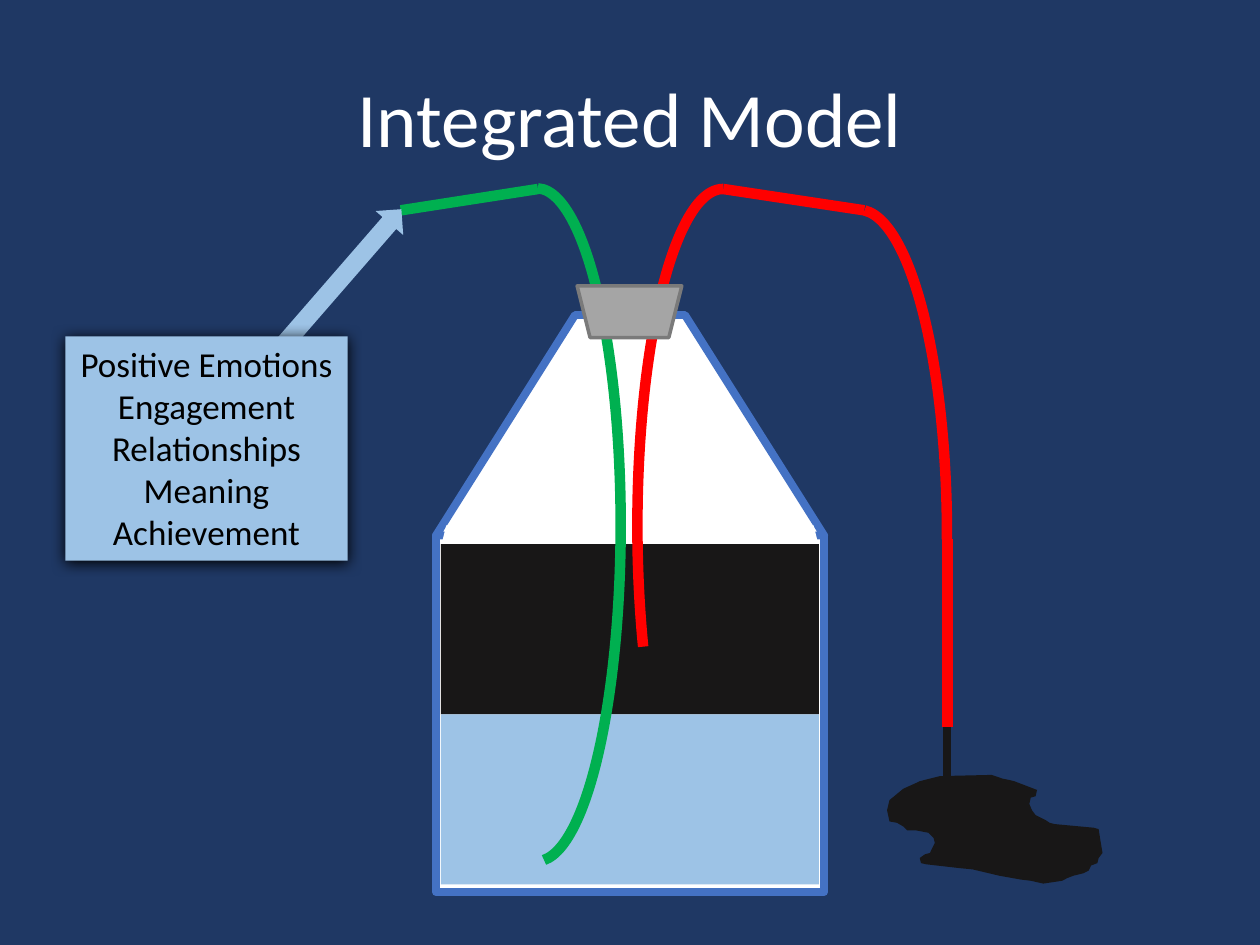
from lxml import etree
from pptx import Presentation
from pptx.dml.color import RGBColor
from pptx.enum.shapes import MSO_CONNECTOR, MSO_SHAPE as SHAPE
from pptx.enum.text import MSO_ANCHOR, MSO_AUTO_SIZE, PP_ALIGN
from pptx.oxml import parse_xml
from pptx.oxml.ns import qn
from pptx.util import Pt

COLORS = {
    "navy": "1F3864", "white": "FFFFFF", "black": "000000", "glass": "4472C4",
    "oil": "181717", "water": "9DC3E6", "red": "FF0000", "green": "00B050",
    "stopper": "A5A5A5", "stopper edge": "7A7A7A",
}
RGB = {name: RGBColor.from_string(value) for name, value in COLORS.items()}
TUBE = 6    # tube width
GLASS = 4.5  # bottle outline width


def write_text(shape, text, size, color, anchor=MSO_ANCHOR.MIDDLE):
    frame = shape.text_frame
    frame.word_wrap = True
    frame.vertical_anchor = anchor
    frame.text = text
    for paragraph in frame.paragraphs:
        paragraph.alignment = PP_ALIGN.CENTER
        font = paragraph.runs[0].font
        font.name, font.size = "Calibri", Pt(size)
        font.color.rgb = RGB[color]


def style(shape, fill=None, line=None, width=0):
    shape.shadow.inherit = False
    if fill:
        shape.fill.solid()
        shape.fill.fore_color.rgb = RGB[fill]
    else:
        shape.fill.background()
    if line:
        shape.line.color.rgb = RGB[line]
        shape.line.width = Pt(width)
    else:
        shape.line.fill.background()


presentation = Presentation()
presentation.slide_width, presentation.slide_height = Pt(720), Pt(540)
slide = presentation.slides.add_slide(presentation.slide_layouts[6])
slide.background.fill.solid()
slide.background.fill.fore_color.rgb = RGB["navy"]
shapes = slide.shapes

# Title
title = shapes.add_textbox(Pt(36), Pt(21.6), Pt(648), Pt(90))
write_text(title, "Integrated Model", size=44, color="white")

# Bottle, liquids and curved tubes, from back to front:
# kind, box, fill, line, line width, adjustments, rotation, flip
bottle_parts = [
    (SHAPE.RECTANGLE, (249.1, 306, 221.8, 203.8), "white", "glass", GLASS, (), 0, None),
    (SHAPE.TRAPEZOID, (249.1, 180, 221.8, 126), "white", "glass", GLASS, (0.631,), 0, None),
    (SHAPE.TRAPEZOID, (252, 300.2, 216, 12.2), "white", None, 0, (), 0, None),
    (SHAPE.RECTANGLE, (252, 311, 216, 97.2), "oil", None, 0, (), 0, None),
    (SHAPE.ARC, (221, 251.3, 384.5, 97.9), None, "red", TUBE, (107.971, 195.973), 270, "flipH"),
    (SHAPE.RECTANGLE, (252, 408.2, 216, 97.2), "water", None, 0, (), 0, None),
    (SHAPE.ARC, (114.5, 252, 384.5, 95.8), None, "green", TUBE, (108.087, 215.268), 90, None),
    (SHAPE.ARC, (304.6, 255.6, 372.2, 100.8), None, "red", TUBE, (108.604, 163.565), 90, None),
    (SHAPE.TRAPEZOID, (329.8, 163.4, 59.8, 29.5), "stopper", "stopper edge", 2, (), 0, "flipV"),
]
for kind, box, fill, line, width, adjustments, rotation, flip in bottle_parts:
    shape = shapes.add_shape(kind, *map(Pt, box))
    style(shape, fill, line, width)
    for index, value in enumerate(adjustments):
        shape.adjustments[index] = value
    shape.rotation = rotation
    if flip:
        shape._element.spPr.xfrm.set(flip, "1")

# Rock
rock_points = [
    (592.6, 451.4), (579.6, 446.4), (576.7, 445.7), (573.1, 445), (566.6, 442.8),
    (537.1, 443.5), (525.6, 446.4), (522.7, 447.8), (516.2, 450.7), (508.3, 457.2),
    (506.9, 463), (508.3, 469.4), (512.6, 470.2), (516.2, 472.3), (518.4, 474.5),
    (523.4, 474.5), (530.6, 475.9), (533.5, 478.8), (534.2, 481.7), (531.4, 487.4),
    (528.5, 488.2), (525.6, 490.3), (526.3, 493.2), (529.2, 493.9), (548.6, 496.1),
    (555.8, 496.8), (558.7, 497.5), (571, 500.4), (583.2, 502.6), (589, 503.3),
    (596.2, 504.9), (607, 503.3), (609.8, 501.8), (613.4, 500.4), (619.2, 499),
    (622.1, 497.5), (623.5, 494.6), (627.1, 493.2), (627.8, 490.3), (630, 487.4),
    (628.6, 478.8), (627.8, 473.8), (625, 473), (602.6, 470.9), (599.8, 470.2),
    (597.6, 468.7), (591.8, 465.8), (589.7, 463), (588.2, 459.4), (589, 455.8),
    (591.8, 455),
]
outline = [(Pt(x), Pt(y)) for x, y in rock_points]
builder = shapes.build_freeform(*outline[0])
builder.add_line_segments(outline[1:], close=True)
style(builder.convert_to_shape(), "oil")

# Straight tubes and the line down to the rock
for ends, color, width in [
    ((413.3, 108, 493.9, 120.2), "red", TUBE),
    ((229, 120.2, 307.4, 108), "green", TUBE),
    ((541.4, 308.2, 541.4, 415.4), "red", TUBE),
    ((541.4, 415.4, 541.4, 455.8), "oil", GLASS),
]:
    connector = shapes.add_connector(MSO_CONNECTOR.STRAIGHT, *map(Pt, ends))
    connector.line.color.rgb = RGB[color]
    connector.line.width = Pt(width)
    etree.SubElement(connector._element.spPr, qn("a:effectLst"))

# Arrow from the outcomes to the green tube
arrow = shapes.add_shape(SHAPE.RIGHT_ARROW, Pt(141.8), Pt(149), Pt(105.8), Pt(20.9))
style(arrow, "water")
arrow.rotation = 311

# Outcomes box with a soft shadow
outcomes = shapes.add_shape(SHAPE.RECTANGLE, Pt(37.4), Pt(192.2), Pt(161.3), Pt(128.2))
style(outcomes, "water")
write_text(
    outcomes,
    "Positive Emotions\nEngagement\nRelationships\nMeaning\nAchievement",
    size=20, color="black", anchor=MSO_ANCHOR.TOP,
)
outcomes.text_frame.auto_size = MSO_AUTO_SIZE.SHAPE_TO_FIT_TEXT
outcomes._element.spPr.find(qn("a:effectLst")).append(parse_xml(
    '<a:outerShdw xmlns:a="http://schemas.openxmlformats.org/drawingml/2006/main"'
    f' blurRad="{Pt(8.5)}" dist="{Pt(1)}" dir="5400000" algn="t" rotWithShape="0">'
    f'<a:srgbClr val="{COLORS["black"]}"/></a:outerShdw>'
))

presentation.save("out.pptx")
